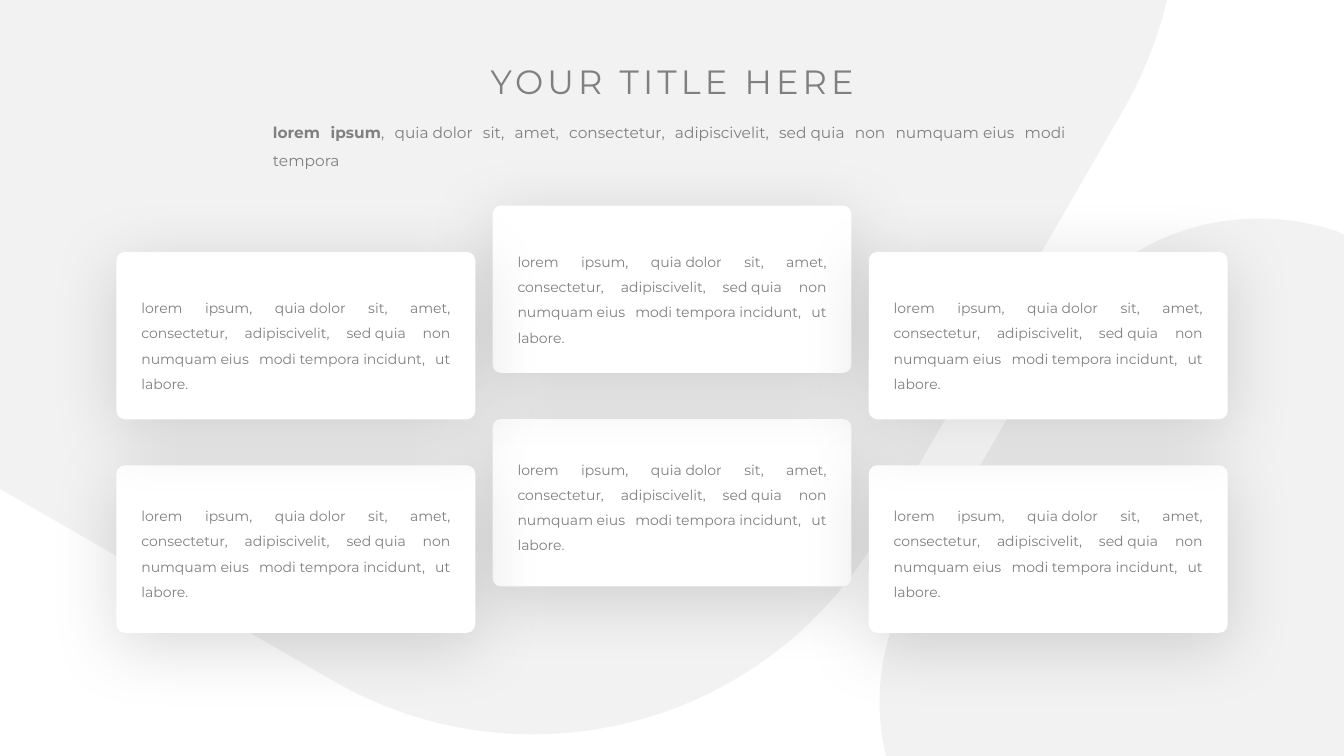
import pptx
import pptx.dml.color
import pptx.enum.shapes
import pptx.enum.text
import pptx.oxml
import pptx.oxml.ns
import pptx.util
import lxml.etree

Pt = pptx.util.Pt
qn = pptx.oxml.ns.qn
ALIGN = pptx.enum.text.PP_ALIGN
COLORS = {"card": "FFFFFF", "backdrop": "F2F2F2", "text": "808080", "shadow": "000000"}
HARD_SPACE = chr(160)

CARD_TEXT = (
    "lorem ipsum, quia~dolor sit, amet, consectetur, adipiscivelit, "
    "sed~quia non numquam~eius modi~tempora~incidunt, ut labore."
)
INTRO_TEXT = (
    ", quia~dolor sit, amet, consectetur, adipiscivelit, "
    "sed~quia non numquam~eius modi~ tempora"
)

RIGHT_WAVE_BOX = (628.56, 156.24, 331.44, 383.76)
RIGHT_WAVE = [
    [(903.6, 156.24)],
    [(920.16, 156.24), (937.44, 159.84), (954, 164.88)],
    [(960, 167.76)], [(960, 540)], [(632.88, 540)], [(630.72, 529.2)],
    [(624.24, 492.48), (630.72, 452.88), (650.88, 417.6)],
    [(753.84, 239.76)],
    [(785.52, 185.04), (841.68, 154.8), (903.6, 156.24)],
]
LEFT_WAVE_BOX = (0, 0, 833.76, 524.16)
LEFT_WAVE = [
    [(0, 0)], [(833.76, 0)], [(830.16, 12.96)],
    [(823.68, 35.28), (814.32, 57.6), (802.08, 79.2)],
    [(627.84, 381.6)],
    [(548.64, 518.4), (374.4, 565.2), (237.6, 486)],
    [(0, 349.2)],
]

CARD_LEFT, CARD_TOP = 83.2, 180
CARD_WIDTH, CARD_HEIGHT = 256.3, 119.5
COLUMN_PITCH, ROW_PITCH = 268.7, 152.5
MIDDLE_RAISE = 33.1
TEXT_INDENT = 10.7
TEXT_DROPS = (24.5, 20.5)


def write(paragraph, text, size=10, bold=False, spacing=0, color="text"):
    """Add a formatted run of text, where a tilde stands for a hard space."""
    run = paragraph.add_run()
    run.text = text.replace("~", HARD_SPACE)
    run.font.name = "Montserrat"
    run.font.size = Pt(size)
    run.font.bold = bold
    run.font.color.rgb = pptx.dml.color.RGBColor.from_string(COLORS[color])
    if spacing:
        run.font._element.set("spc", str(spacing * 100))


class SlideBuilder:
    """Hold the style and the current slide, and add its elements."""

    def __init__(self, slide):
        """Keep the slide to build on."""
        self.slide = slide
        self.shapes = slide.shapes

    def paint(self, shape, color):
        """Give a shape a plain fill without outline or shadow."""
        shape.shadow.inherit = False
        shape.fill.solid()
        shape.fill.fore_color.rgb = pptx.dml.color.RGBColor.from_string(COLORS[color])
        shape.line.fill.background()

    def wave(self, box, outline, layer):
        """Draw a curved backdrop on the layout, at a layer from the back."""
        anchors = [(Pt(x), Pt(y)) for x, y in (part[-1] for part in outline)]
        builder = self.shapes.build_freeform(*anchors[0])
        builder.add_line_segments(anchors[1:], close=True)
        shape = builder.convert_to_shape()
        self.paint(shape, "backdrop")
        shape.left, shape.top, shape.width, shape.height = map(Pt, box)
        contour = next(shape.element.iter(qn("a:path")))
        contour.set("w", str(shape.width))
        contour.set("h", str(shape.height))
        for step, part in zip(list(contour), outline):
            if len(part) == 3:
                curve = lxml.etree.Element(qn("a:cubicBezTo"))
                contour.replace(step, curve)
                step = curve
            for point in list(step):
                step.remove(point)
            for x, y in part:
                point = lxml.etree.SubElement(step, qn("a:pt"))
                point.set("x", str(Pt(x) - shape.left))
                point.set("y", str(Pt(y) - shape.top))
        self.slide.slide_layout.shapes.element.insert(2 + layer, shape.element)

    def card(self, left, top):
        """Draw a rounded card with a soft shadow below it."""
        kind = pptx.enum.shapes.MSO_SHAPE.ROUNDED_RECTANGLE
        shape = self.shapes.add_shape(kind, Pt(left), Pt(top), Pt(CARD_WIDTH), Pt(CARD_HEIGHT))
        shape.adjustments[0] = 0.05
        self.paint(shape, "card")
        effects = shape.element.spPr.find(qn("a:effectLst"))
        effects.append(pptx.oxml.parse_xml(
            f'<a:outerShdw {pptx.oxml.ns.nsdecls("a")} blurRad="{Pt(50)}" dist="{Pt(9)}" '
            f'dir="5400000" algn="t" rotWithShape="0"><a:srgbClr val="{COLORS["shadow"]}">'
            '<a:alpha val="15000"/></a:srgbClr></a:outerShdw>'
        ))

    def format_frame(self, shape, alignment, wrap=True, line_spacing=1.0):
        """Set up the text frame of a shape and return its paragraph."""
        frame = shape.text_frame
        frame.word_wrap = wrap
        frame.auto_size = pptx.enum.text.MSO_AUTO_SIZE.SHAPE_TO_FIT_TEXT
        frame.vertical_anchor = pptx.enum.text.MSO_ANCHOR.TOP
        paragraph = frame.paragraphs[0]
        paragraph.alignment = alignment
        paragraph.line_spacing = line_spacing
        return paragraph

    def text(self, left, top, width, height):
        """Add a justified text box and return its paragraph."""
        box = self.shapes.add_textbox(Pt(left), Pt(top), Pt(width), Pt(height))
        return self.format_frame(box, ALIGN.JUSTIFY, line_spacing=1.5)

    def title(self, text, left, top, width, height):
        """Place the title in front of the cards."""
        title = self.shapes.title
        title.left, title.top, title.width, title.height = map(Pt, (left, top, width, height))
        write(self.format_frame(title, ALIGN.CENTER, wrap=False), text, size=24, spacing=3)
        self.shapes.element.append(title.element)


def main():
    """Build the slide and save it."""
    presentation = pptx.Presentation()
    presentation.slide_width, presentation.slide_height = Pt(960), Pt(540)
    builder = SlideBuilder(presentation.slides.add_slide(presentation.slide_layouts[5]))

    builder.wave(RIGHT_WAVE_BOX, RIGHT_WAVE, layer=0)
    builder.wave(LEFT_WAVE_BOX, LEFT_WAVE, layer=1)

    cards = []
    for row in (1, 0):
        for column in (1, 2, 0):
            left = CARD_LEFT + column * COLUMN_PITCH
            top = CARD_TOP + row * ROW_PITCH - (MIDDLE_RAISE if column == 1 else 0)
            cards.append((left, top, TEXT_DROPS[row]))
    for left, top, drop in cards:
        builder.card(left, top)
    for left, top, drop in cards:
        write(builder.text(left + TEXT_INDENT, top + drop, 234.7, 77.8), CARD_TEXT)

    builder.title("YOUR TITLE HERE", 342.7, 39.9, 275, 36)
    intro = builder.text(187.9, 77.8, 583.9, 25.2)
    write(intro, "lorem ipsum", size=11, bold=True)
    write(intro, INTRO_TEXT, size=11)

    presentation.save("out.pptx")


if __name__ == "__main__":
    main()
